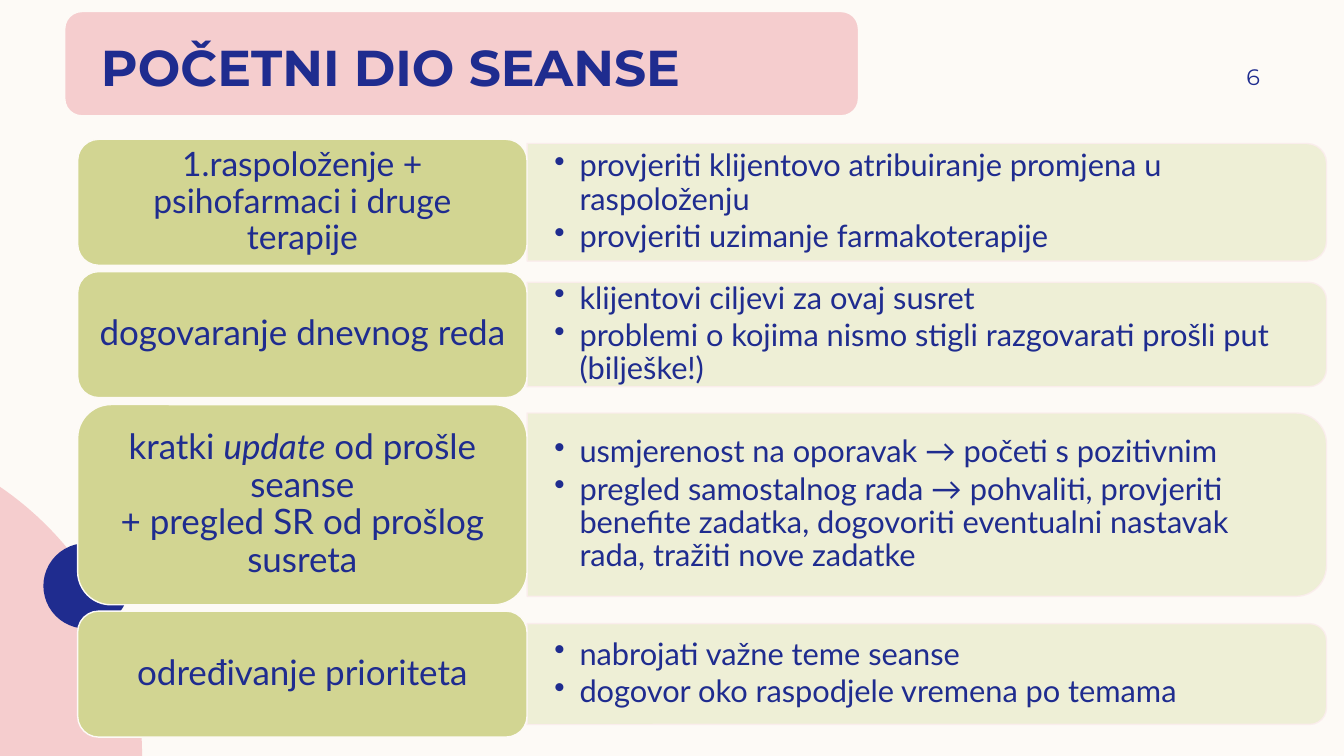
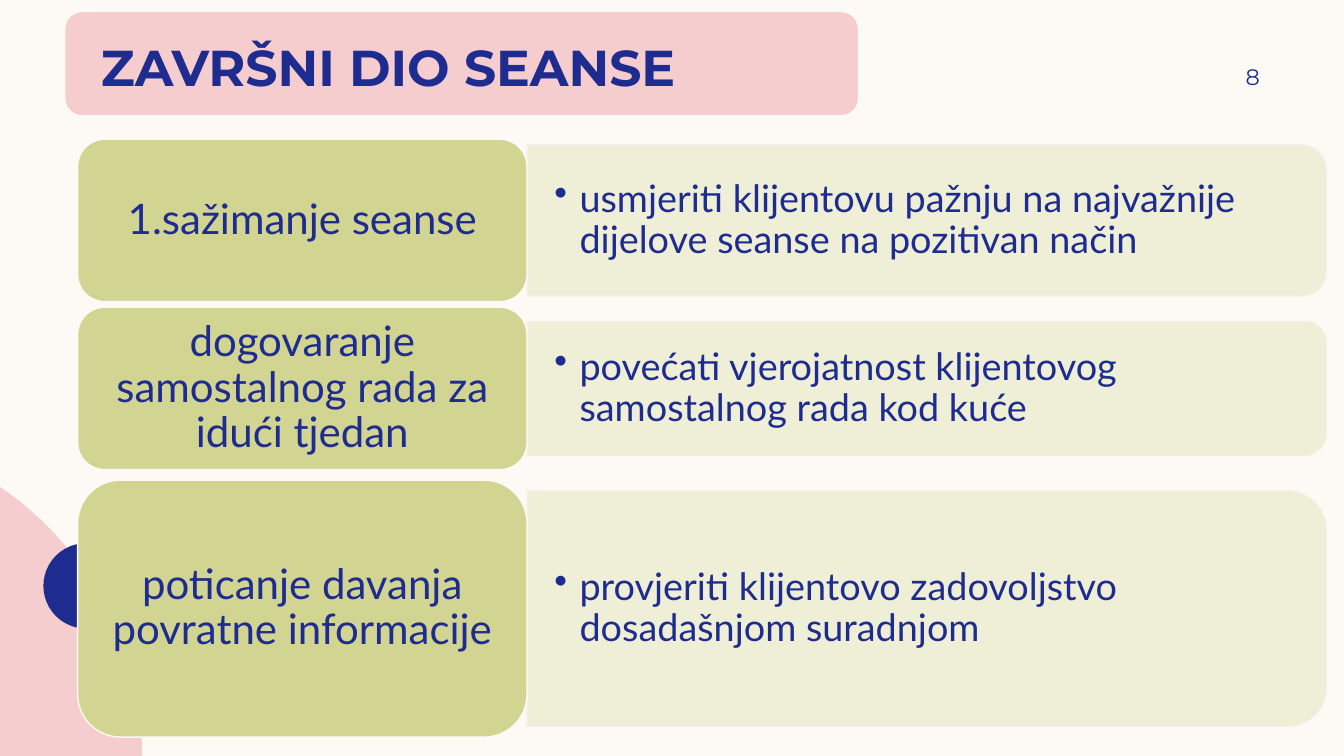
from math import acos, cos, sin

from lxml.etree import SubElement
from pptx import Presentation
from pptx.dml.color import RGBColor
from pptx.enum.shapes import MSO_SHAPE
from pptx.enum.text import MSO_ANCHOR, PP_ALIGN
from pptx.oxml.ns import qn
from pptx.util import Pt

NAVY, PINK, CREAM = "1F2C8F", "F5CDCE", "FDFAF6"
OLIVE, PALE_OLIVE, PALE_PINK = "D2D592", "EDEED3", "FBEDED"
HEADING_FONT, BODY_FONT = "Montserrat", "Lato"
SLIDE_W, SLIDE_H = 960, 540
CARD_X, CARD_W = 55.5, 321
PANEL_X, PANEL_W, PANEL_TEXT_W = 376.5, 571, 565

# Each row: card top, card height, panel height, card text size, card text, bullets.
# Asterisks enclose italic words.
OPENING_ROWS = [
    (99.5, 90, 84, 24, "raspoloženje +\npsihofarmaci i druge terapije",
     ["provjeriti klijentovo atribuiranje promjena u raspoloženju",
      "provjeriti uzimanje farmakoterapije"]),
    (194, 90, 74.5, 25, "dogovaranje dnevnog reda",
     ["klijentovi ciljevi za ovaj susret",
      "problemi o kojima nismo stigli razgovarati prošli put (bilješke!)"]),
    (289, 143, 131, 25, "kratki *update* od prošle seanse\n+ pregled SR od prošlog susreta",
     ["usmjerenost na oporavak → početi s pozitivnim",
      "pregled samostalnog rada → pohvaliti, provjeriti benefite zadatka, "
      "dogovoriti eventualni nastavak rada, tražiti nove zadatke"]),
    (436.5, 90, 72, 25, "određivanje prioriteta",
     ["nabrojati važne teme seanse",
      "dogovor oko raspodjele vremena po temama"]),
]
CLOSING_ROWS = [
    (99.5, 116, 108, 30, "sažimanje seanse",
     ["usmjeriti klijentovu pažnju na najvažnije dijelove seanse na pozitivan način"]),
    (219.5, 116, 96, 30, "dogovaranje samostalnog rada za idući tjedan",
     ["povećati vjerojatnost klijentovog samostalnog rada kod kuće"]),
    (343, 183.5, 168.5, 30, "poticanje davanja povratne informacije",
     ["provjeriti klijentovo zadovoljstvo dosadašnjom suradnjom"]),
]


def rgb(color):
    return RGBColor.from_string(color)


def paint(sp, fill, line=None, line_width=1):
    sp.shadow.inherit = False
    sp.fill.solid()
    sp.fill.fore_color.rgb = rgb(fill)
    if line:
        sp.line.color.rgb = rgb(line)
        sp.line.width = Pt(line_width)
    else:
        sp.line.fill.background()


def add_shape(s, kind, x, y, w, h, fill, line=None, line_width=1):
    sp = s.shapes.add_shape(kind, Pt(x), Pt(y), Pt(w), Pt(h))
    paint(sp, fill, line, line_width)
    return sp


def add_textbox(s, x, y, w, h):
    return s.shapes.add_textbox(Pt(x), Pt(y), Pt(w), Pt(h)).text_frame


def set_frame(tf, anchor, left=7.2, top=3.6, right=7.2, bottom=3.6):
    tf.word_wrap = True
    tf.vertical_anchor = anchor
    tf.margin_left, tf.margin_top = Pt(left), Pt(top)
    tf.margin_right, tf.margin_bottom = Pt(right), Pt(bottom)


def style_font(font, name, size, bold=False):
    font.name, font.size, font.bold = name, Pt(size), bold
    font.color.rgb = rgb(NAVY)


def write_heading(p, text, size, align, bold=False):
    p.text = text
    p.alignment = align
    style_font(p.runs[0].font, HEADING_FONT, size, bold)


def write_body(p, text, size, align, space_after):
    """Write lines split at newlines, with *starred* words in italics."""
    for i, line in enumerate(text.split("\n")):
        if i:
            p.add_line_break()
        for j, part in enumerate(line.split("*")):
            r = p.add_run()
            r.text = part
            style_font(r.font, BODY_FONT, size)
            r.font.italic = j % 2 == 1
    p.alignment = align
    p.line_spacing = 0.9
    p.space_after = Pt(space_after)


def set_marker(p, tag, indent, **attributes):
    pPr = p._p.get_or_add_pPr()
    pPr.set("marL", str(Pt(indent)))
    pPr.set("indent", str(Pt(-indent)))
    SubElement(pPr, qn(tag), **attributes)


def add_corner_decoration(s):
    """Draw the pink arc and navy disc, and move them to the slide's layout."""
    arc_x, radius, steps = -131.3, 232.8, 40
    start = acos(-arc_x / radius)
    angles = [start * (1 - i / steps) for i in range(steps + 1)]
    points = [(Pt(arc_x + radius * cos(a)), Pt(SLIDE_H - radius * sin(a))) for a in angles]
    builder = s.shapes.build_freeform(*points[0])
    builder.add_line_segments(points[1:] + [(0, Pt(SLIDE_H))], close=True)
    arc = builder.convert_to_shape()
    paint(arc, PINK)
    disc = add_shape(s, MSO_SHAPE.OVAL, 31, 388, 61, 61, NAVY)
    for sp in (arc, disc):
        s.slide_layout.shapes.element.append(sp.element)


def add_header(s, title, number):
    tf = add_textbox(s, 822, 36, 78, 37.5)
    set_frame(tf, MSO_ANCHOR.MIDDLE, right=0)
    write_heading(tf.paragraphs[0], number, 16, PP_ALIGN.RIGHT)
    band = add_shape(s, MSO_SHAPE.ROUNDED_RECTANGLE, 46, 8, 567.5, 75, PINK, CREAM, 1.5)
    set_frame(band.text_frame, MSO_ANCHOR.BOTTOM, left=22.5, top=0, bottom=10.5)
    write_heading(band.text_frame.paragraphs[0], title, 36, PP_ALIGN.LEFT, bold=True)


def add_panel(s, middle, height, bullets, size):
    """Add a panel, rounded on its right side, around the given middle line."""
    sp = add_shape(s, MSO_SHAPE.ROUND_2_SAME_RECTANGLE,
                   PANEL_X + (PANEL_W - height) / 2, middle - PANEL_W / 2,
                   height, PANEL_W, PALE_OLIVE, PALE_PINK)
    sp.rotation = 90
    for color in sp.element.spPr.iter(qn("a:srgbClr")):
        SubElement(color, qn("a:alpha"), val="90000")
    tf = add_textbox(s, PANEL_X, middle - height / 2, PANEL_TEXT_W, height)
    set_frame(tf, MSO_ANCHOR.MIDDLE, 19.5, 0, 19.5, 0)
    for i, text in enumerate(bullets):
        p = tf.add_paragraph() if i else tf.paragraphs[0]
        p.level = 1
        set_marker(p, "a:buChar", 18, char="•")
        write_body(p, text, size, PP_ALIGN.LEFT, round(size * 0.15))


def add_card(s, top, height, text, size, numbered):
    sp = add_shape(s, MSO_SHAPE.ROUNDED_RECTANGLE, CARD_X, top, CARD_W, height, OLIVE, CREAM)
    set_frame(sp.text_frame, MSO_ANCHOR.MIDDLE)
    p = sp.text_frame.paragraphs[0]
    if numbered:
        set_marker(p, "a:buAutoNum", 0, type="arabicPeriod")
    write_body(p, text, size, PP_ALIGN.CENTER, 6)


def add_session_slide(prs, title, number, rows, bullet_size):
    s = prs.slides.add_slide(prs.slide_layouts[6])
    add_header(s, title, number)
    for i, (top, height, panel_height, size, text, bullets) in enumerate(rows):
        add_panel(s, top + height / 2, panel_height, bullets, bullet_size)
        add_card(s, top, height, text, size, numbered=i == 0)
    return s


def main():
    prs = Presentation()
    prs.slide_width, prs.slide_height = Pt(SLIDE_W), Pt(SLIDE_H)
    background = prs.slide_master.background.fill
    background.solid()
    background.fore_color.rgb = rgb(CREAM)
    opening = add_session_slide(prs, "POČETNI DIO SEANSE", "6", OPENING_ROWS, 22)
    add_corner_decoration(opening)
    add_session_slide(prs, "ZAVRŠNI DIO SEANSE", "8", CLOSING_ROWS, 27)
    prs.save("out.pptx")


if __name__ == "__main__":
    main()
